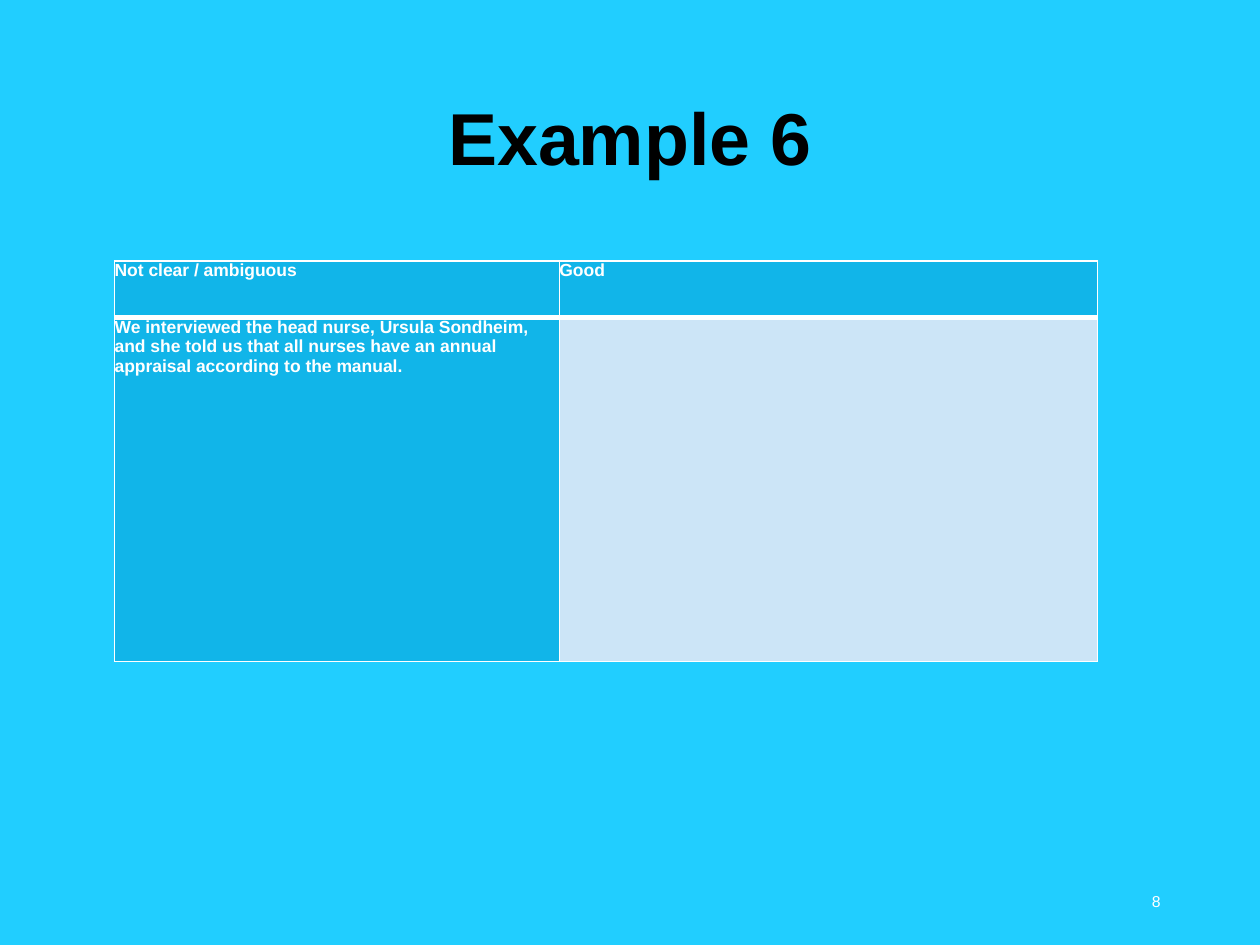
import pptx
import pptx.dml.color
import pptx.enum.text
import pptx.oxml
import pptx.oxml.ns
import pptx.util
from pptx.dml.color import RGBColor
from pptx.util import Inches

SKY = RGBColor(0x21, 0xCE, 0xFF)
BLUE = RGBColor(0x11, 0xB5, 0xE9)
PALE = RGBColor(0xCC, 0xE5, 0xF7)
WHITE = RGBColor(0xFF, 0xFF, 0xFF)
BLACK = RGBColor(0, 0, 0)

ALIGN = pptx.enum.text.PP_ALIGN
ANCHOR = pptx.enum.text.MSO_ANCHOR


def style(paragraph, size, color, bold=False):
    paragraph.font.name = "Arial"
    paragraph.font.size = pptx.util.Pt(size)
    paragraph.font.bold = bold
    paragraph.font.color.rgb = color


def add_label(slide, box, text, size, color, align, bold=False):
    frame = slide.shapes.add_textbox(*map(Inches, box)).text_frame
    frame.word_wrap = True
    frame.vertical_anchor = ANCHOR.MIDDLE
    paragraph = frame.paragraphs[0]
    paragraph.text = text
    paragraph.alignment = align
    style(paragraph, size, color, bold)
    return paragraph


def add_title(slide, box):
    title = add_label(slide, box, "Example 6", 42, BLACK, ALIGN.CENTER, True)
    title.line_spacing = 0.9


def add_page_number(slide, box):
    add_label(slide, box, "8", 9, WHITE, ALIGN.RIGHT)


def set_borders(cell, widths):
    properties = cell._tc.get_or_add_tcPr()
    for position, (side, width) in enumerate(widths.items()):
        border = pptx.oxml.parse_xml(
            f'<a:{side} {pptx.oxml.ns.nsdecls("a")} w="{pptx.util.Pt(width)}">'
            f'<a:solidFill><a:srgbClr val="{WHITE}"/></a:solidFill></a:{side}>'
        )
        properties.insert(position, border)


def add_comparison(slide, box):
    rows = [
        ["Not clear / ambiguous", "Good"],
        [
            "We interviewed the head nurse, Ursula Sondheim, and she told us "
            "that all nurses have an annual appraisal according to the manual.",
            "",
        ],
    ]
    left, top, width, height = map(Inches, box)
    table = slide.shapes.add_table(2, 2, left, top, width, height).table
    table.columns[0].width = Inches(3.53)
    table.columns[1].width = width - table.columns[0].width
    table.rows[0].height = Inches(0.45)
    table.rows[1].height = height - table.rows[0].height
    for r, texts in enumerate(rows):
        for c, text in enumerate(texts):
            cell = table.cell(r, c)
            cell.margin_left = cell.margin_right = 0
            cell.margin_top = cell.margin_bottom = 0
            cell.fill.solid()
            cell.fill.fore_color.rgb = BLUE if text else PALE
            cell.text = text
            style(cell.text_frame.paragraphs[0], 10, WHITE, True)
            divider_above, divider_below = (1, 3) if r == 0 else (3, 1)
            set_borders(
                cell,
                {"lnL": 1, "lnR": 1, "lnT": divider_above, "lnB": divider_below},
            )


def main():
    deck = pptx.Presentation()
    deck.slide_width = Inches(10)
    deck.slide_height = Inches(7.5)
    slide = deck.slides.add_slide(deck.slide_layouts[6])
    slide.background.fill.solid()
    slide.background.fill.fore_color.rgb = SKY
    add_title(slide, (0.69, 0.4, 8.62, 1.45))
    add_page_number(slide, (7.06, 6.95, 2.25, 0.4))
    add_comparison(slide, (0.91, 2.07, 7.8, 3.18))
    deck.save("out.pptx")


if __name__ == "__main__":
    main()
